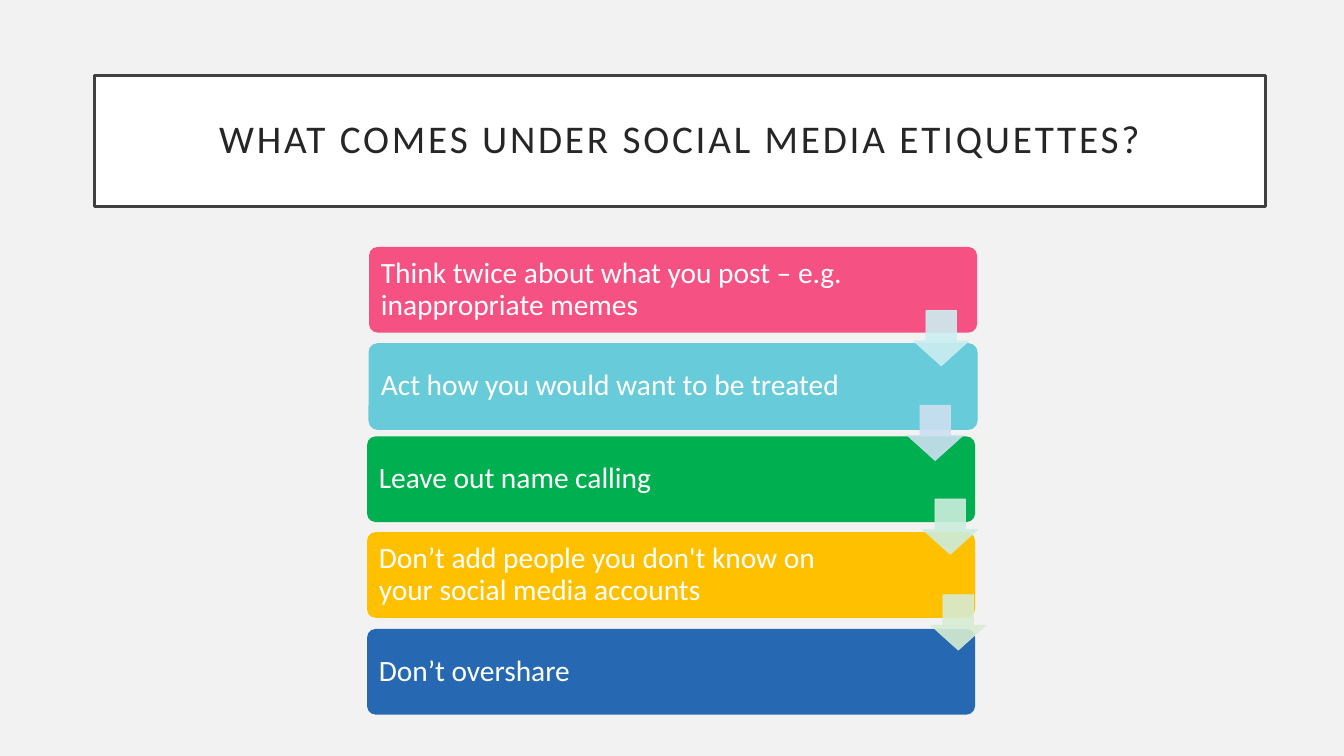
import dataclasses

import lxml.etree
import pptx
import pptx.dml.color
import pptx.enum.shapes
import pptx.enum.text
import pptx.oxml.ns
import pptx.shapes.autoshape
import pptx.slide
import pptx.util

WIDTH = pptx.util.Inches(13.33)
HEIGHT = pptx.util.Inches(7.5)
FONT = "Calibri"
COLOURS = {
    "background": "F2F2F2",
    "white": "FFFFFF",
    "frame": "404040",
    "title": "262626",
    "pink": "F55183",
    "turquoise": "68CBDA",
    "green": "00B050",
    "amber": "FFC000",
    "blue": "2768B2",
    "pale turquoise": "CCEEF1",
    "pale blue": "CCDFF1",
    "pale green": "CCEDDE",
    "pale lime": "D7ECD3",
}
PRESET = pptx.enum.shapes.MSO_SHAPE
ALIGN = pptx.enum.text.PP_ALIGN


@dataclasses.dataclass
class Area:
    """A rectangle in percent of the slide's width and height."""
    left: float
    top: float
    width: float
    height: float

    def lengths(self) -> tuple[int, int, int, int]:
        return (round(self.left * WIDTH / 100), round(self.top * HEIGHT / 100),
                round(self.width * WIDTH / 100), round(self.height * HEIGHT / 100))


@dataclasses.dataclass
class Rule:
    text: str
    colour: str
    left: float
    top: float
    text_width: float = 37.36
    line_width: float = 0


@dataclasses.dataclass
class Arrow:
    colour: str
    left: float
    top: float


TITLE_AREA = Area(7.05, 10, 87.1, 17.33)
RULES = [
    Rule("Think twice about what you post – e.g. inappropriate memes",
         "pink", 27.46, 32.67, text_width=37.66),
    Rule("Act how you would want to be treated", "turquoise", 27.46, 45.47, line_width=0.75),
    Rule("Leave out name calling", "green", 27.31, 57.73),
    Rule("Don’t add people you don't know on your social media accounts", "amber", 27.31, 70.4),
    Rule("Don’t overshare", "blue", 27.31, 83.2),
]
ARROWS = [
    Arrow("pale blue", 67.52, 53.6),
    Arrow("pale turquoise", 67.97, 41.07),
    Arrow("pale green", 68.64, 66),
    Arrow("pale lime", 69.24, 78.67),
]


def rgb(name: str) -> pptx.dml.color.RGBColor:
    return pptx.dml.color.RGBColor.from_string(COLOURS[name])


def add_preset(slide: pptx.slide.Slide, preset: PRESET, area: Area, fill: str, *,
               line: str = "", line_width: float = 0,
               adjustments: tuple[float, ...] = ()) -> pptx.shapes.autoshape.Shape:
    shape = slide.shapes.add_shape(preset, *area.lengths())
    shape.shadow.inherit = False
    shape.fill.solid()
    shape.fill.fore_color.rgb = rgb(fill)
    if line_width:
        shape.line.color.rgb = rgb(line or fill)
        shape.line.width = pptx.util.Pt(line_width)
    else:
        shape.line.fill.background()
    for index, value in enumerate(adjustments):
        shape.adjustments[index] = value
    return shape


def write_text(box: pptx.shapes.autoshape.Shape, text: str, *, size: float, colour: str,
               inset: float, align: ALIGN = ALIGN.LEFT, tracking: float = 0) -> None:
    frame = box.text_frame
    frame.word_wrap = True
    frame.vertical_anchor = pptx.enum.text.MSO_ANCHOR.MIDDLE
    frame.margin_left = frame.margin_right = pptx.util.Inches(inset)
    frame.margin_top = frame.margin_bottom = pptx.util.Inches(inset)
    para = frame.paragraphs[0]
    para.alignment = align
    para.line_spacing = 0.9
    span = para.add_run()
    span.text = text
    span.font.name = FONT
    span.font.size = pptx.util.Pt(size)
    span.font.color.rgb = rgb(colour)
    if tracking:
        span.font._element.set("spc", str(round(tracking * 100)))


def set_opacity(shape: pptx.shapes.autoshape.Shape, percent: int) -> None:
    """Apply one opacity to both the fill and the line."""
    for colour in shape._element.spPr.iter(pptx.oxml.ns.qn("a:srgbClr")):
        alpha = lxml.etree.SubElement(colour, pptx.oxml.ns.qn("a:alpha"))
        alpha.set("val", str(percent * 1000))


def add_rule(slide: pptx.slide.Slide, rule: Rule) -> None:
    add_preset(slide, PRESET.ROUNDED_RECTANGLE, Area(rule.left, rule.top, 45.24, 11.33),
               rule.colour, line_width=rule.line_width, adjustments=(0.1,))
    text_area = Area(rule.left + 0.2, rule.top + 0.3, rule.text_width, 10.67)
    box = slide.shapes.add_textbox(*text_area.lengths())
    write_text(box, rule.text, size=21, colour="white", inset=0.09)


def add_arrow(slide: pptx.slide.Slide, arrow: Arrow) -> None:
    shape = add_preset(slide, PRESET.DOWN_ARROW, Area(arrow.left, arrow.top, 4.13, 7.33),
                       arrow.colour, line_width=0.5, adjustments=(0.55, 0.45))
    set_opacity(shape, 90)


def main() -> None:
    deck = pptx.Presentation()
    deck.slide_width, deck.slide_height = WIDTH, HEIGHT
    slide = deck.slides.add_slide(deck.slide_layouts[6])
    slide.background.fill.solid()
    slide.background.fill.fore_color.rgb = rgb("background")

    title = add_preset(slide, PRESET.RECTANGLE, TITLE_AREA, "white",
                       line="frame", line_width=2.5)
    write_text(title, "WHAT COMES UNDER SOCIAL MEDIA ETIQUETTES?", size=28, colour="title",
               inset=0.2, align=ALIGN.CENTER, tracking=2)
    for rule in RULES:
        add_rule(slide, rule)
    for arrow in ARROWS:
        add_arrow(slide, arrow)
    deck.save("out.pptx")


if __name__ == "__main__":
    main()
